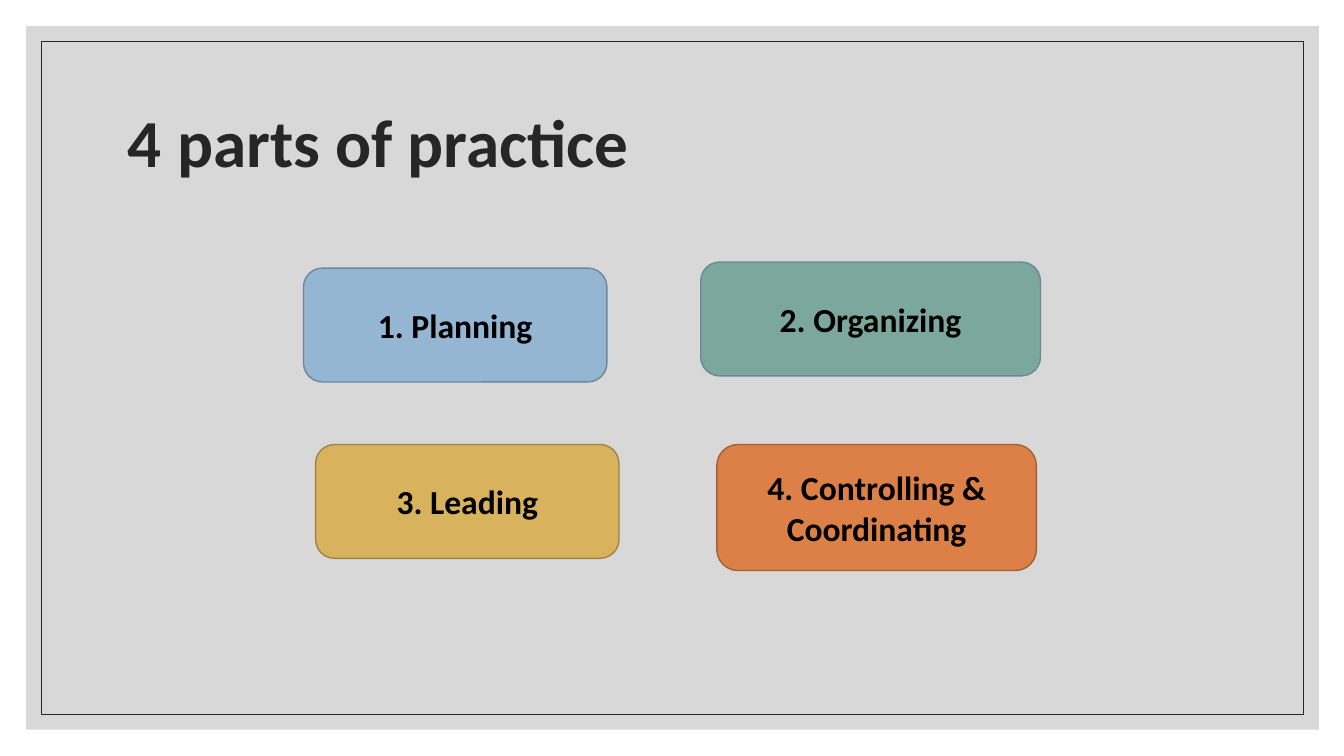
from pptx import Presentation
from pptx import util as u
from pptx.dml.color import RGBColor
from pptx.enum import shapes, text
from pptx.oxml.ns import qn
from lxml import etree

FONT = "Calibri"
BLACK = RGBColor(0x00, 0x00, 0x00)
INK = RGBColor(0x26, 0x26, 0x26)
GRAY = RGBColor(0xBF, 0xBF, 0xBF)
BLUE = RGBColor(0x94, 0xB6, 0xD2)
BLUE_EDGE = RGBColor(0x6D, 0x87, 0x9B)
GREEN = RGBColor(0x7B, 0xA7, 0x9D)
GOLD = RGBColor(0xD8, 0xB2, 0x5C)
GOLD_EDGE = RGBColor(0xA0, 0x84, 0x44)
ORANGE = RGBColor(0xDD, 0x80, 0x47)
ORANGE_EDGE = RGBColor(0xA3, 0x5F, 0x35)

PARTS = [
    ("1. Planning", (3.01, 2.66, 3.01, 1.13), BLUE, BLUE_EDGE),
    ("2. Organizing", (6.95, 2.6, 3.37, 1.13), GREEN, BLUE_EDGE),
    ("3. Leading", (3.13, 4.41, 3.01, 1.13), GOLD, GOLD_EDGE),
    ("4. Controlling & Coordinating", (7.11, 4.41, 3.17, 1.25), ORANGE, ORANGE_EDGE),
]


def add_block(page, kind, box, fill=None, edge=None, weight=1):
    """Add a shadowless shape with an optional fill and outline."""
    block = page.shapes.add_shape(kind, *map(u.Inches, box))
    block.shadow.inherit = False
    if fill is None:
        block.fill.background()
    else:
        block.fill.solid()
        block.fill.fore_color.rgb = fill
    if edge is None:
        block.line.fill.background()
    else:
        block.line.color.rgb = edge
        block.line.width = u.Pt(weight)
    return block


def write(shape, words, size, color, align):
    """Write bold, vertically centred text into a shape."""
    frame = shape.text_frame
    frame.word_wrap = True
    frame.vertical_anchor = text.MSO_ANCHOR.MIDDLE
    frame.text = words
    para = frame.paragraphs[0]
    para.alignment = align
    font = para.runs[0].font
    font.name, font.size, font.bold = FONT, u.Pt(size), True
    font.color.rgb = color


def add_frame(page, box, inset):
    """Add the translucent panel and the thin border inside it."""
    left, top, width, height = box
    panel = add_block(page, shapes.MSO_SHAPE.RECTANGLE, box, GRAY)
    tint = panel.fill._xPr.find(qn("a:solidFill"))[0]
    etree.SubElement(tint, qn("a:alpha")).set("val", "60000")
    inner = (left + inset, top + inset, width - 2 * inset, height - 2 * inset)
    add_block(page, shapes.MSO_SHAPE.RECTANGLE, inner, edge=INK, weight=0.5)


def add_title(page, box, words):
    """Add the slide title."""
    title = page.shapes.add_textbox(*map(u.Inches, box))
    write(title, words, 48, INK, text.PP_ALIGN.LEFT)
    title.text_frame.paragraphs[0].line_spacing = 0.9


def add_part(page, box, words, fill, edge):
    """Add one rounded, labelled part of practice."""
    part = add_block(page, shapes.MSO_SHAPE.ROUNDED_RECTANGLE, box, fill, edge)
    write(part, words, 24, BLACK, text.PP_ALIGN.CENTER)


def main():
    """Build and save the deck."""
    deck = Presentation()
    deck.slide_width, deck.slide_height = u.Inches(13.33), u.Inches(7.5)
    page = deck.slides.add_slide(deck.slide_layouts[6])
    add_frame(page, (0.26, 0.26, 12.82, 6.98), 0.15)
    add_title(page, (1.17, 0.7, 11, 1.5), "4 parts of practice")
    for words, box, fill, edge in PARTS:
        add_part(page, box, words, fill, edge)
    deck.save("out.pptx")


if __name__ == "__main__":
    main()
